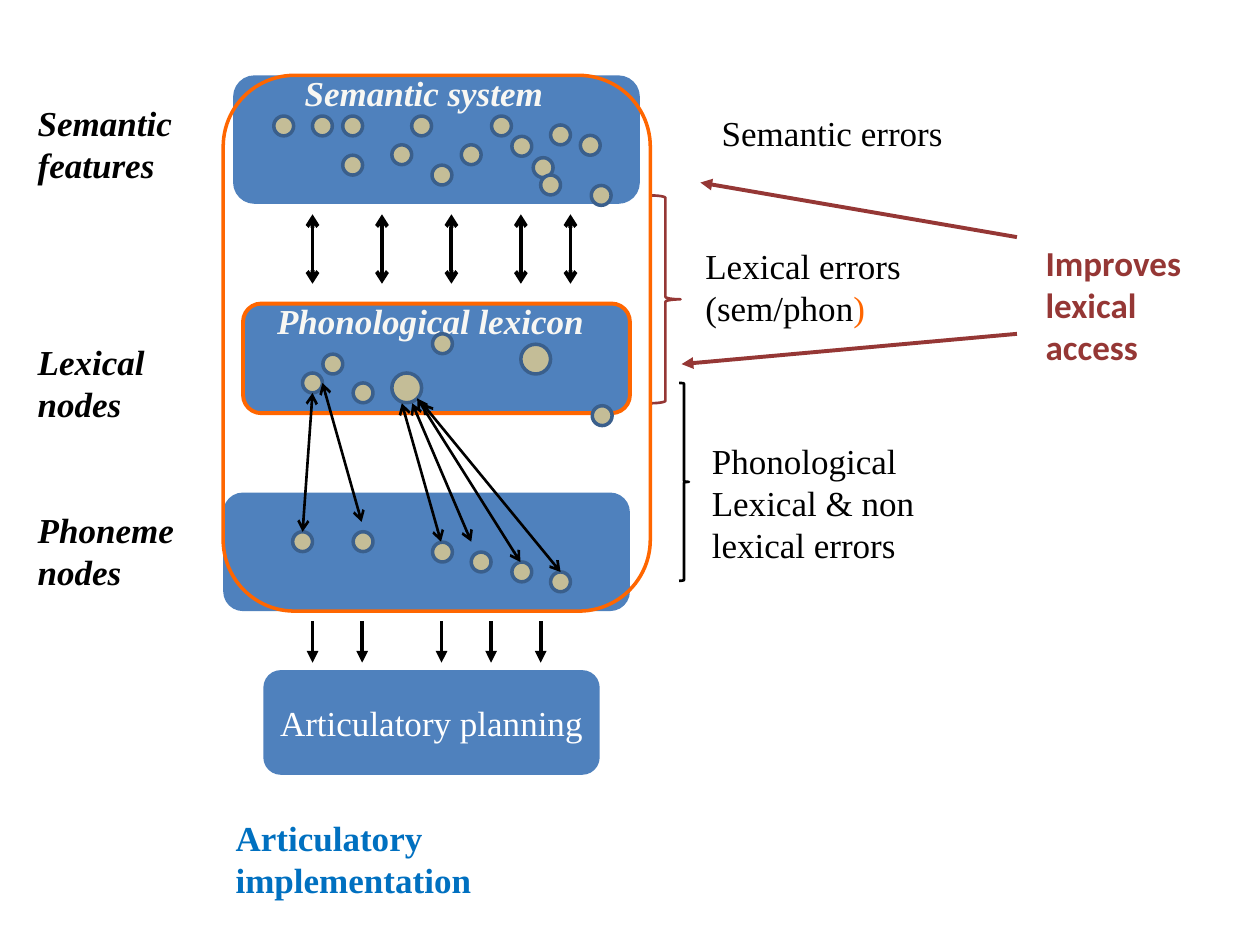
from lxml import etree
from pptx import Presentation
from pptx.dml.color import RGBColor
from pptx.enum.shapes import MSO_CONNECTOR as Line, MSO_SHAPE as Preset
from pptx.enum.text import MSO_ANCHOR as Anchor, PP_ALIGN as Align
from pptx.oxml.ns import qn
from pptx.util import Cm, Pt

BLACK = RGBColor(0x00, 0x00, 0x00)
WHITE = RGBColor(0xFF, 0xFF, 0xFF)
CREAM = RGBColor(0xF8, 0xF7, 0xF3)
BLUE = RGBColor(0x4F, 0x81, 0xBD)
BRIGHT_BLUE = RGBColor(0x00, 0x70, 0xC0)
NODE_FILL = RGBColor(0xC4, 0xBD, 0x97)
NODE_EDGE = RGBColor(0x3A, 0x5F, 0x8C)
ORANGE = RGBColor(0xFF, 0x66, 0x00)
RED = RGBColor(0x95, 0x37, 0x35)
SERIF = "Times New Roman"

# Node centres in cm
SEMANTIC_NODES = [
    (5.72, 2.54), (6.5, 2.54), (7.11, 2.54), (8.5, 2.54), (10.11, 2.54),
    (7.11, 3.33), (8.1, 3.12), (8.91, 3.53), (9.5, 3.12), (10.52, 2.95),
    (11.3, 2.72), (11.9, 2.93), (10.95, 3.38), (11.1, 3.73), (12.12, 3.94),
]
LEXICAL_NODES = [(6.3, 7.72), (6.71, 7.34), (7.32, 7.92), (8.92, 6.93), (12.14, 8.38)]
LARGE_LEXICAL_NODES = [(8.2, 7.82), (10.8, 7.24)]
PHONEME_NODES = [
    (6.1, 10.92), (7.32, 10.92), (8.92, 11.13),
    (9.7, 11.33), (10.52, 11.53), (11.3, 11.73),
]
LEXICAL_PHONEME_LINKS = [
    ((6.3, 7.92), (6.1, 10.72)), ((6.5, 7.72), (7.29, 10.52)),
    ((8.1, 8.13), (8.89, 10.92)), ((8.31, 8.13), (9.5, 10.92)),
    ((8.41, 8.03), (10.49, 11.33)), ((8.51, 8.13), (11.3, 11.53)),
]
SEMANTIC_LEXICAL_XS = [6.3, 7.7, 9.1, 10.5, 11.5]
ARTICULATION_XS = [6.3, 7.3, 8.9, 9.9, 10.9]


def add_outline(slide, preset, box, fill=None, edge=None, width=2):
    """Add a preset shape; without fill or edge that part stays empty."""
    shape = slide.shapes.add_shape(preset, *map(Cm, box))
    shape.shadow.inherit = False
    if fill is None:
        shape.fill.background()
    else:
        shape.fill.solid()
        shape.fill.fore_color.rgb = fill
    if edge is None:
        shape.line.fill.background()
    else:
        shape.line.color.rgb = edge
        shape.line.width = Pt(width)
    return shape


def add_nodes(slide, centres, size=0.4):
    for x, y in centres:
        box = (x - size / 2, y - size / 2, size, size)
        add_outline(slide, Preset.OVAL, box, NODE_FILL, NODE_EDGE)


def format_runs(frame, color, bold=False, italic=False, font=SERIF):
    for paragraph in frame.paragraphs:
        for run in paragraph.runs:
            run.font.name = font
            run.font.size = Pt(20)
            run.font.bold = bold
            run.font.italic = italic
            run.font.color.rgb = color


def add_label(slide, text, box, color=BLACK, align=Align.LEFT, **style):
    frame = slide.shapes.add_textbox(*map(Cm, box)).text_frame
    frame.word_wrap = True
    frame.text = text
    for paragraph in frame.paragraphs:
        paragraph.alignment = align
    format_runs(frame, color, **style)
    return frame


def add_arrow(slide, start, end, color=BLACK, width=2.25, head=None, tail="triangle"):
    """Draw a line with the given arrowheads at its start and end."""
    arrow = slide.shapes.add_connector(Line.STRAIGHT, *map(Cm, start + end))
    arrow.line.color.rgb = color
    arrow.line.width = Pt(width)
    line_xml = arrow.line._get_or_add_ln()
    for tag, kind in (("a:headEnd", head), ("a:tailEnd", tail)):
        if kind:
            etree.SubElement(line_xml, qn(tag)).set("type", kind)
    etree.SubElement(arrow._element.spPr, qn("a:effectLst"))


def add_levels(slide):
    add_outline(slide, Preset.ROUNDED_RECTANGLE, (4.5, 9.93, 8.2, 2.39), BLUE)
    add_outline(slide, Preset.ROUNDED_RECTANGLE, (4.7, 1.52, 8.2, 2.59), BLUE)
    add_outline(slide, Preset.ROUNDED_RECTANGLE, (4.9, 6.12, 7.8, 2.21), BLUE, ORANGE, 2.25)
    planning = add_outline(slide, Preset.ROUNDED_RECTANGLE, (5.31, 13.51, 6.78, 2.11), BLUE)
    frame = planning.text_frame
    frame.word_wrap = False
    frame.vertical_anchor = Anchor.MIDDLE
    frame.text = "Articulatory planning"
    frame.paragraphs[0].alignment = Align.CENTER
    format_runs(frame, WHITE)

    title_style = {"color": CREAM, "bold": True, "italic": True}
    add_label(slide, "Semantic system", (5.89, 1.32, 5.99, 1.12), **title_style)
    add_label(slide, "Phonological lexicon", (3.51, 5.92, 10.34, 1.12),
              align=Align.CENTER, **title_style)
    add_label(slide, "Articulatory\vimplementation", (4.5, 16.33, 9.17, 1.96),
              BRIGHT_BLUE, bold=True)
    for text, top in (("Semantic features", 1.93), ("Lexical nodes", 6.73),
                      ("Phoneme\vnodes", 10.13)):
        add_label(slide, text, (0.51, top, 3.61, 1.96), bold=True, italic=True)


def add_network(slide):
    add_nodes(slide, SEMANTIC_NODES + LEXICAL_NODES + PHONEME_NODES)
    add_nodes(slide, LARGE_LEXICAL_NODES, size=0.6)
    for lexical, phoneme in LEXICAL_PHONEME_LINKS:
        add_arrow(slide, lexical, phoneme, width=1.5, head="arrow", tail="arrow")
    for x in SEMANTIC_LEXICAL_XS:
        add_arrow(slide, (x, 4.32), (x, 5.72), head="arrow", tail="arrow")
    for x in ARTICULATION_XS:
        add_arrow(slide, (x, 12.52), (x, 13.36))


def add_errors(slide):
    add_label(slide, "Semantic errors", (14.3, 2.13, 5.79, 1.12))
    lexical = add_label(slide, "Lexical errors (sem/phon", (13.97, 4.8, 6.86, 1.96))
    bracket = lexical.paragraphs[0].add_run()
    bracket.text = ")"
    format_runs(lexical, BLACK)
    bracket.font.color.rgb = ORANGE
    add_label(slide, "Phonological\nLexical & non\vlexical errors", (14.1, 8.74, 6.6, 2.82))

    add_outline(slide, Preset.RIGHT_BRACE, (13.11, 3.94, 0.61, 4.19), edge=RED, width=1.5)
    add_outline(slide, Preset.RIGHT_BRACE, (13.69, 7.72, 0.2, 3.99), edge=BLACK, width=1.5)


def add_treatment_effect(slide):
    frame = add_outline(slide, Preset.ROUNDED_RECTANGLE, (4.5, 1.52, 8.61, 10.8), edge=ORANGE)
    frame.adjustments[0] = 0.167
    add_arrow(slide, (20.5, 4.78), (14.12, 3.68), RED)
    add_arrow(slide, (20.5, 6.73), (13.74, 7.34), RED)
    add_label(slide, "Improves lexical access", (20.83, 4.75, 3.3, 2.82), RED,
              bold=True, font="Calibri")


def main():
    deck = Presentation()
    deck.slide_width, deck.slide_height = Cm(25.4), Cm(19.05)
    slide = deck.slides.add_slide(deck.slide_layouts[6])
    add_levels(slide)
    add_network(slide)
    add_errors(slide)
    add_treatment_effect(slide)
    deck.save("out.pptx")


if __name__ == "__main__":
    main()
